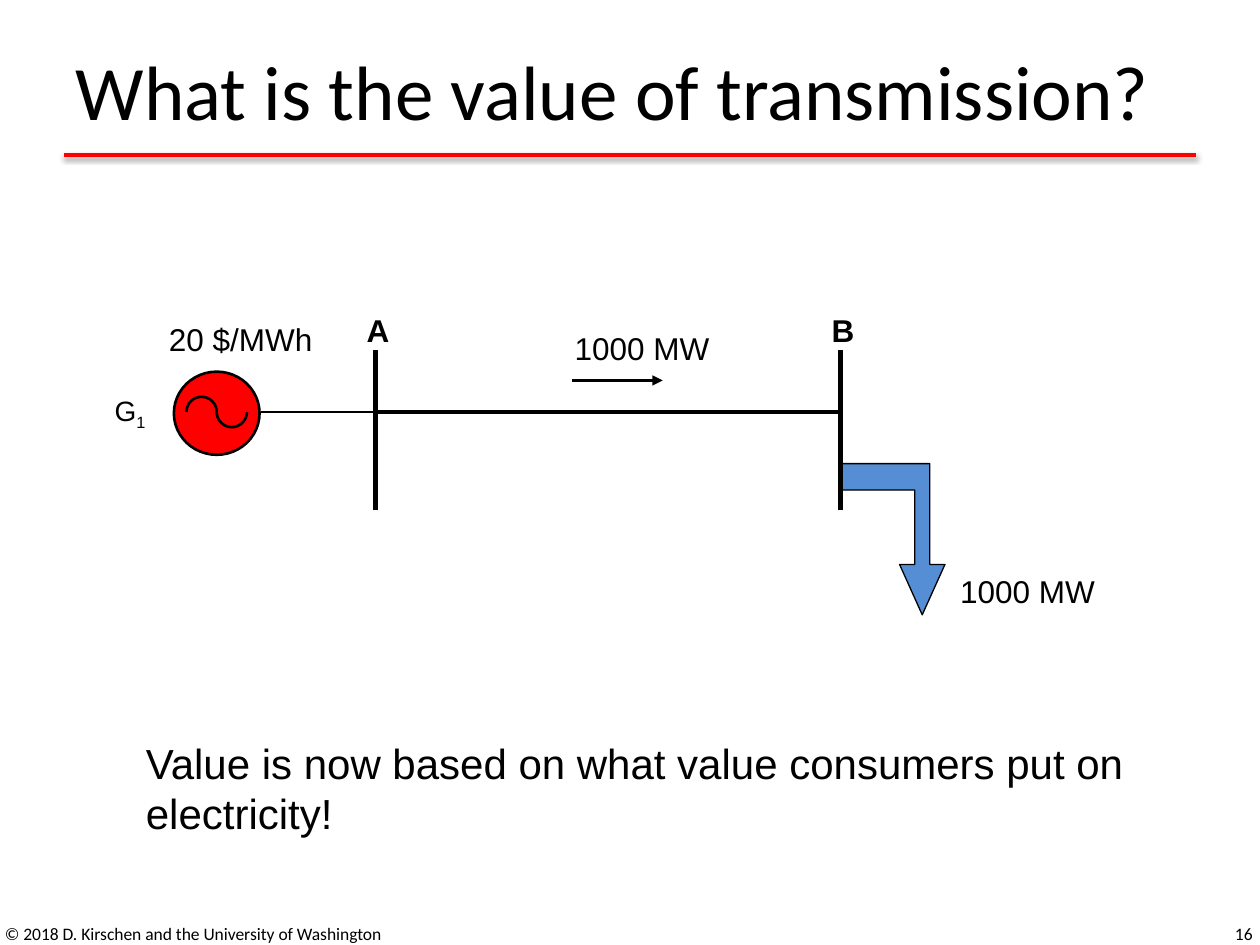
import math
from lxml import etree
from pptx import Presentation, util as u
from pptx.dml.color import RGBColor
from pptx.enum import shapes as sh, text as tx
from pptx.oxml.ns import qn

INK = {"black": "000000", "red": "FF0000", "blue": "558ED5"}
TITLE = "What is the value of transmission?"
MID, TOP, LOW = 3.27, 2.78, 4.05
BUS = {"A": 2.98, "B": 6.67}
LEFT, MIDDLE, RIGHT = tx.PP_ALIGN.LEFT, tx.PP_ALIGN.CENTER, tx.PP_ALIGN.RIGHT
LABELS = [
    ("20 $/MWh", 1.34, 2.54),
    ("1000 MW", 4.56, 2.61),
    ("1000 MW", 7.62, 4.54),
]
FOOT = [
    ("© 2018 D. Kirschen and the University of Washington", -0.06, 3.88, LEFT),
    ("16", 7.71, 2.33, RIGHT),
]
CLAIM = ["Value is now based on what value consumers put on", "electricity!"]
LOAD = [(7.32, 4.88), (7.14, 4.48), (7.26, 4.48), (7.26, 3.89), (6.67, 3.89),
        (6.67, 3.68), (7.38, 3.68), (7.38, 4.48), (7.5, 4.48)]
HUB, RAD = 1.72, 0.12

deck = Presentation()
deck.slide_width, deck.slide_height = u.Inches(10), u.Inches(7.5)
slide = deck.slides.add_slide(deck.slide_layouts[5])


def color(name):
    return RGBColor.from_string(INK[name])


def write(frame, lines, size, font="Arial", align=LEFT, bold=False):
    frame.word_wrap = True
    for i, line in enumerate(lines):
        para = frame.add_paragraph() if i else frame.paragraphs[0]
        para.text, para.alignment = line, align
        para.font.size, para.font.name = u.Pt(size), font
        para.font.bold = bold
        para.font.color.rgb = color("black")


def box(lines, x, y, w, h, size, pad=True, **style):
    frame = slide.shapes.add_textbox(*map(u.Inches, (x, y, w, h))).text_frame
    if not pad:
        frame.margin_left = frame.margin_right = 0
        frame.margin_top = frame.margin_bottom = 0
    write(frame, lines, size, **style)
    return frame


def wire(x1, y1, x2, y2, width, ink="black"):
    line = slide.shapes.add_connector(
        sh.MSO_CONNECTOR.STRAIGHT, *map(u.Inches, (x1, y1, x2, y2)))
    line.line.width = u.Pt(width)
    line.line.color.rgb = color(ink)
    fx = etree.SubElement(line._element.spPr, qn("a:effectLst"))
    return line, fx


def paint(shape, width, fill=None):
    shape.shadow.inherit = False
    if fill:
        shape.fill.solid()
        shape.fill.fore_color.rgb = color(fill)
    else:
        shape.fill.background()
    shape.line.width = u.Pt(width)
    shape.line.color.rgb = color("black")


def trace(dots, close):
    dots = [(u.Inches(x), u.Inches(y)) for x, y in dots]
    pen = slide.shapes.build_freeform(*dots[0])
    pen.add_line_segments(dots[1:], close=close)
    return pen.convert_to_shape()


head = slide.shapes.title
head.left, head.top, head.width, head.height = map(u.Inches, (0.5, 0.13, 9, 1.17))
write(head.text_frame, [TITLE], 44, "Calibri")
head.text_frame.vertical_anchor = tx.MSO_ANCHOR.MIDDLE

rule, fx = wire(0.51, 1.23, 9.49, 1.23, 2, "red")
cast = etree.SubElement(fx, qn("a:outerShdw"), blurRad="40000", dist="20000",
                        dir="5400000", rotWithShape="0")
tone = etree.SubElement(cast, qn("a:srgbClr"), val=INK["black"])
etree.SubElement(tone, qn("a:alpha"), val="38000")

for words, x, w, align in FOOT:
    foot = box([words], x, 7.21, w, 0.4, 10, font="Calibri", align=align)
    foot.vertical_anchor = tx.MSO_ANCHOR.MIDDLE

wire(2.07, MID, BUS["A"], MID, 1.5)
disc = slide.shapes.add_shape(
    sh.MSO_SHAPE.OVAL, *map(u.Inches, (1.38, 2.95, 0.68, 0.66)))
paint(disc, 1.5, "red")
wave = []
for side in (-1, 1):
    for step in range(25):
        turn = math.pi * step / 24
        wave.append((HUB + side * RAD - RAD * math.cos(turn),
                     MID + side * RAD * math.sin(turn)))
paint(trace(wave, False), 1.5)

paint(trace(LOAD, True), 0.75, "blue")
for name, x in BUS.items():
    wire(x, TOP, x, LOW, 3)
    box([name], x - 0.12, 2.47, 0.28, 0.49, 18, False, align=MIDDLE, bold=True)
wire(BUS["A"], MID, BUS["B"], MID, 2.25)
flow, _ = wire(4.54, 3.02, 5.26, 3.02, 1.5)
etree.SubElement(flow.line._get_or_add_ln(), qn("a:tailEnd"), type="triangle")

for words, x, y in LABELS:
    box([words], x, y, 1.21, 0.49, 18, False)
unit = box(["G"], 0.91, 3.12, 0.28, 0.49, 16, False)
sub = unit.paragraphs[0].add_run()
sub.text = "1"
sub.font._element.set("baseline", "-25000")
box(CLAIM, 1.06, 5.8, 8.03, 0.91, 24)

deck.save("out.pptx")
